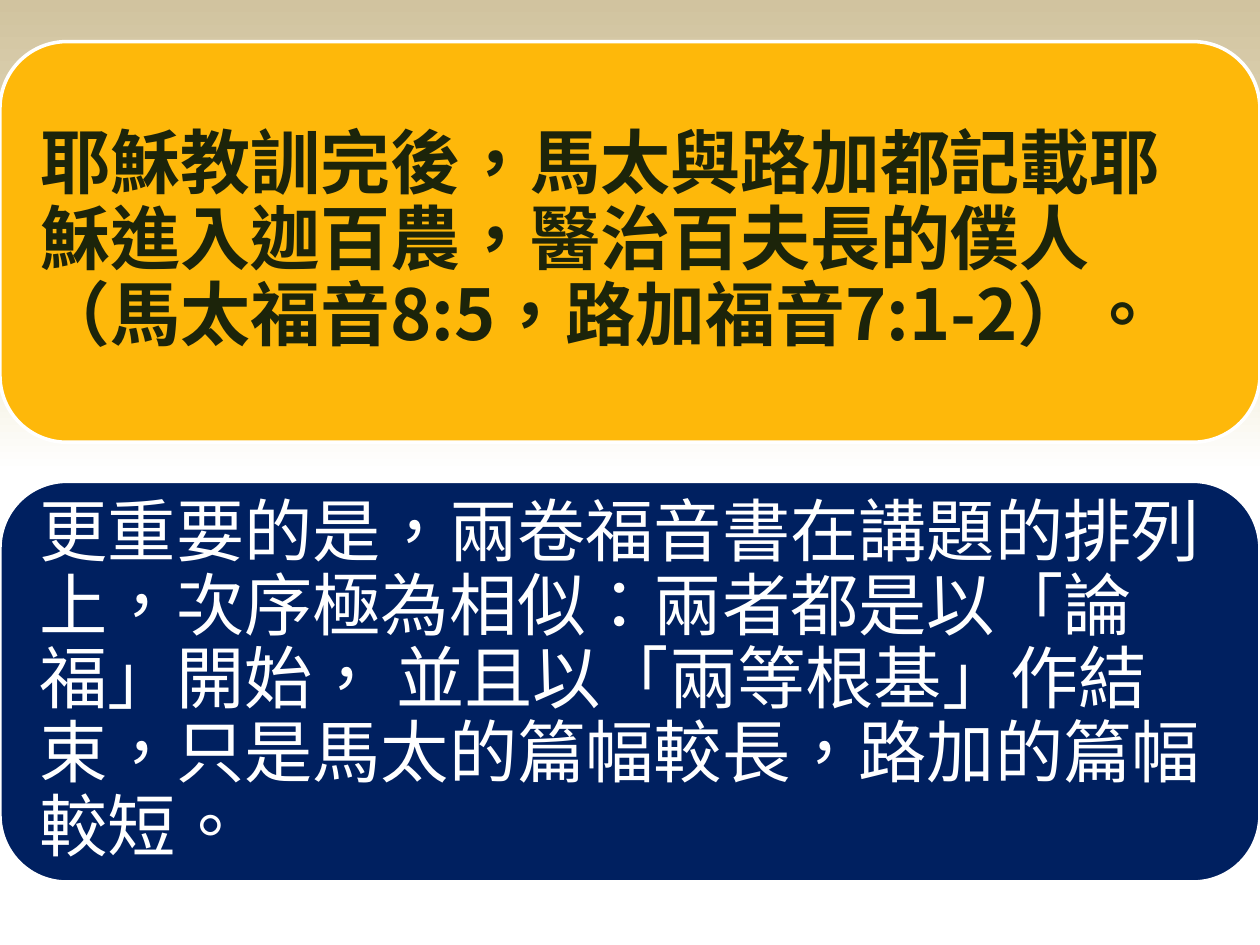
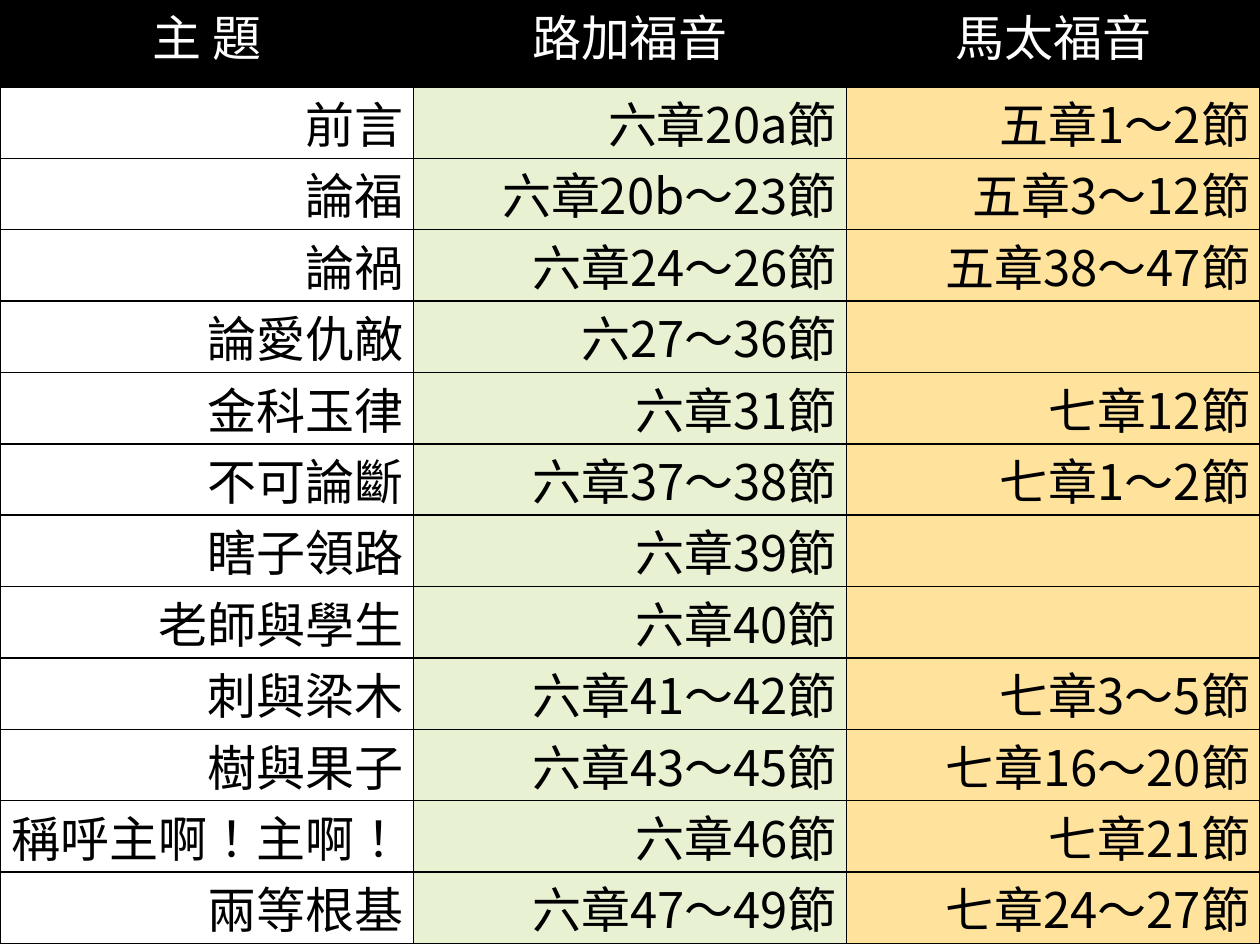
from dataclasses import dataclass

from lxml.etree import SubElement as Sub
from pptx import Presentation
from pptx.dml.color import RGBColor
from pptx.enum.lang import MSO_LANGUAGE_ID as Lang
from pptx.enum.shapes import MSO_SHAPE as Shape
from pptx.enum.text import MSO_ANCHOR as Anchor, PP_ALIGN as Align
from pptx.oxml.ns import qn
from pptx.util import Inches, Pt

CJK, LATIN = "Noto Sans CJK SC", "Arial"
BLACK, WHITE = "000000", "FFFFFF"
STOPS = ((50, WHITE), (65, "F0EBD5"), (100, "D1C39F"))
WIDTH, HEIGHT = 10, 7.5


@dataclass
class Panel:
    top: float
    fill: str
    ink: str
    size: int
    bold: bool
    inset: float
    text: str


PANELS = (
    Panel(0.33, "FEB80A", "1C240A", 40, True, 0.17,
          "耶穌教訓完後，馬太與路加都記載耶穌進入迦百農，醫治百夫長的僕人"
          "（馬太福音8:5，路加福音7:1-2）。"),
    Panel(3.82, "002060", WHITE, 39, False, 0.16,
          "更重要的是，兩卷福音書在講題的排列上，次序極為相似：兩者都是以「論福」開始， "
          "並且以「兩等根基」作結束，只是馬太的篇幅較長，路加的篇幅較短。"),
)

HEADS = ("主 題", "路加福音", "馬太福音")
COLS = (3.28, 3.44, 3.28)
FILLS = (WHITE, "E8F2D3", "FFE39D")
HEAD_H, TABLE_H = 0.69, 7.49
# Topic, then (chapter, verses) in each gospel
TOPICS = (
    ("前言", ("六章", "20a節"), ("五章", "1～2節")),
    ("論福", ("六章", "20b～23節"), ("五章", "3～12節")),
    ("論禍", ("六章", "24～26節"), ("五章", "38～47節")),
    ("論愛仇敵", ("六", "27～36節"), ()),
    ("金科玉律", ("六章", "31節"), ("七章", "12節")),
    ("不可論斷", ("六章", "37～38節"), ("七章", "1～2節")),
    ("瞎子領路", ("六章", "39節"), ()),
    ("老師與學生", ("六章", "40節"), ()),
    ("刺與梁木", ("六章", "41～42節"), ("七章", "3～5節")),
    ("樹與果子", ("六章", "43～45節"), ("七章", "16～20節")),
    ("稱呼主啊！主啊！", ("六章", "46節"), ("七章", "21節")),
    ("兩等根基", ("六章", "47～49節"), ("七章", "24～27節")),
)


def rgb(code: str) -> RGBColor:
    return RGBColor.from_string(code)


def paint(item, code: str) -> None:
    item.fill.solid()
    item.fill.fore_color.rgb = rgb(code)


def style(para, size: int, ink: str, bold: bool = False) -> None:
    para.font.size = Pt(size)
    para.font.bold = bold
    para.font.color.rgb = rgb(ink)


def write(para, text: str, face: str) -> None:
    """Add a run in Traditional Chinese."""
    run = para.add_run()
    run.text = text
    run.font.name = face
    run.font.language_id = Lang.TRADITIONAL_CHINESE
    Sub(run.font._element, qn("a:ea"), typeface=CJK)


def shade(master) -> None:
    """Give all slides the sand gradient, fading downwards."""
    fill = master.background.fill
    fill.gradient()
    fill.gradient_angle = 90
    stops = next(master.element.iter(qn("a:gsLst")))
    for old in list(stops):
        stops.remove(old)
    for spot, code in STOPS:
        stop = Sub(stops, qn("a:gs"), pos=str(spot * 1000))
        Sub(stop, qn("a:srgbClr"), val=code)


def draw_panel(slide, panel: Panel) -> None:
    box = slide.shapes.add_shape(Shape.ROUNDED_RECTANGLE, 0, Inches(panel.top),
                                 Inches(WIDTH), Inches(3.18))
    box.shadow.inherit = False
    paint(box, panel.fill)
    box.line.color.rgb = rgb(WHITE)
    box.line.width = Pt(2)
    frame = box.text_frame
    frame.word_wrap = True
    frame.vertical_anchor = Anchor.MIDDLE
    frame.margin_left = frame.margin_right = Inches(panel.inset)
    frame.margin_top = frame.margin_bottom = Inches(panel.inset)
    para = frame.paragraphs[0]
    para.alignment = Align.LEFT
    para.line_spacing = 0.9
    # Keep closing punctuation inside the margin
    para._p.get_or_add_pPr().set("hangingPunct", "0")
    style(para, panel.size, panel.ink, panel.bold)
    write(para, panel.text, CJK)


def edge(cell) -> None:
    """Rule all four sides of a cell in black."""
    props = cell._tc.get_or_add_tcPr()
    for side in ("lnL", "lnR", "lnT", "lnB"):
        line = Sub(props, qn(f"a:{side}"), w=str(Pt(1)))
        Sub(Sub(line, qn("a:solidFill")), qn("a:srgbClr"), val=BLACK)


def fill_cell(cell, parts: tuple, fill: str, ink: str, align: Align) -> None:
    """Write the first part in the Latin face and the second in the CJK face."""
    edge(cell)
    paint(cell, fill)
    cell.margin_left = cell.margin_right = Inches(0.08)
    cell.margin_top = cell.margin_bottom = 0
    para = cell.text_frame.paragraphs[0]
    para.alignment = align
    style(para, 28, ink)
    for text, face in zip(parts, (LATIN, CJK)):
        write(para, text, face)


def draw_table(slide) -> None:
    table = slide.shapes.add_table(len(TOPICS) + 1, len(COLS), 0, 0,
                                   Inches(WIDTH), Inches(TABLE_H)).table
    table.first_row = table.horz_banding = False
    for col, width in zip(table.columns, COLS):
        col.width = Inches(width)
    for row in table.rows:
        row.height = Inches((TABLE_H - HEAD_H) / len(TOPICS))
    table.rows[0].height = Inches(HEAD_H)
    for c, head in enumerate(HEADS):
        fill_cell(table.cell(0, c), (head,), BLACK, WHITE, Align.CENTER)
    for r, (topic, luke, matt) in enumerate(TOPICS, 1):
        for c, parts in enumerate(((topic,), luke, matt)):
            fill_cell(table.cell(r, c), parts, FILLS[c], BLACK, Align.RIGHT)


def main() -> None:
    deck = Presentation()
    deck.slide_width, deck.slide_height = Inches(WIDTH), Inches(HEIGHT)
    shade(deck.slide_master)
    blank = deck.slide_layouts[6]
    slide = deck.slides.add_slide(blank)
    for panel in PANELS:
        draw_panel(slide, panel)
    draw_table(deck.slides.add_slide(blank))
    deck.save("out.pptx")


if __name__ == "__main__":
    main()
